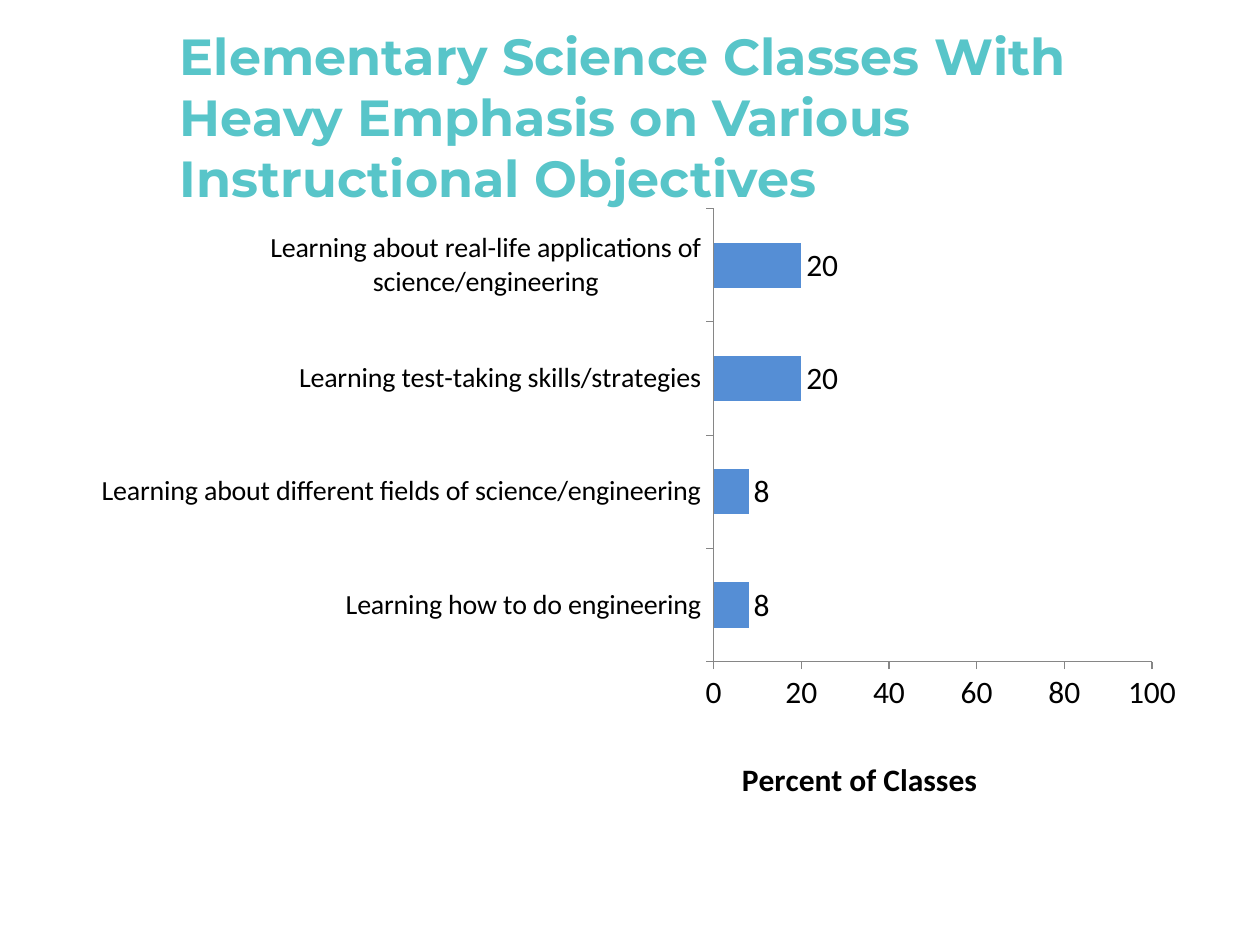
from lxml.etree import SubElement
from pptx import Presentation
from pptx.chart.data import CategoryChartData
from pptx.dml.color import RGBColor
from pptx.enum.chart import XL_CHART_TYPE, XL_LABEL_POSITION, XL_TICK_MARK
from pptx.enum.text import MSO_ANCHOR
from pptx.oxml.ns import qn
from pptx.util import Inches, Pt

TEAL = RGBColor(0x58, 0xC5, 0xC9)
BLUE = RGBColor(0x55, 0x8E, 0xD5)
GRAY = RGBColor(0x86, 0x86, 0x86)
BLACK = RGBColor(0, 0, 0)

CLASS_PERCENTS = {
    "Learning how to do engineering": 8,
    "Learning about different fields of science/engineering": 8,
    "Learning test-taking skills/strategies": 20,
    "Learning about real-life applications of science/engineering": 20,
}


def set_layout(parent, index, **settings):
    """Give a chart part a manual layout, as fractions of the chart's size."""
    for old in parent.findall(qn("c:layout")):
        parent.remove(old)
    layout = SubElement(parent, qn("c:layout"))
    manual = SubElement(layout, qn("c:manualLayout"))
    for name, value in settings.items():
        SubElement(manual, qn(f"c:{name}")).set("val", str(value))
    parent.insert(index, layout)


class SlideBuilder:
    heading_font = "Montserrat"
    body_font = "Calibri"

    def __init__(self, slide):
        self.slide = slide

    def style(self, font, name, size, color, bold=False):
        font.name = name
        font.size = Pt(size)
        font.bold = bold
        font.color.rgb = color

    def title(self, text, left, top, width, height):
        box = self.slide.shapes.add_textbox(
            Inches(left), Inches(top), Inches(width), Inches(height))
        frame = box.text_frame
        frame.word_wrap = True
        frame.vertical_anchor = MSO_ANCHOR.MIDDLE
        frame.text = text
        self.style(frame.paragraphs[0].runs[0].font, self.heading_font, 29, TEAL, True)

    def axis(self, axis, size):
        axis.has_major_gridlines = False
        axis.major_tick_mark = XL_TICK_MARK.OUTSIDE
        axis.minor_tick_mark = XL_TICK_MARK.NONE
        axis.format.line.color.rgb = GRAY
        axis.format.line.width = Pt(0.75)
        self.style(axis.tick_labels.font, self.body_font, size, BLACK)

    def bar_chart(self, percents, axis_title, left, top, width, height):
        chart_data = CategoryChartData()
        chart_data.categories = list(percents)
        chart_data.add_series("Series 1", list(percents.values()))
        chart = self.slide.shapes.add_chart(
            XL_CHART_TYPE.BAR_CLUSTERED, Inches(left), Inches(top),
            Inches(width), Inches(height), chart_data).chart
        chart.has_legend = False
        chart.has_title = False
        self.style(chart.font, self.body_font, 18, BLACK)

        plot = chart.plots[0]
        plot.gap_width = 150
        plot.vary_by_categories = False
        fill = plot.series[0].format.fill
        fill.solid()
        fill.fore_color.rgb = BLUE
        labels = plot.series[0].data_labels
        labels.show_value = True
        labels.position = XL_LABEL_POSITION.OUTSIDE_END
        self.style(labels.font, self.body_font, 18, BLACK)

        self.axis(chart.category_axis, 16)
        percent_axis = chart.value_axis
        self.axis(percent_axis, 18)
        percent_axis.minimum_scale = 0
        percent_axis.maximum_scale = 100
        percent_axis.major_unit = 20
        title_frame = percent_axis.axis_title.text_frame
        title_frame.text = axis_title
        self.style(title_frame.paragraphs[0].runs[0].font, self.body_font, 18, BLACK, True)

        plot_area = chart.element.find(".//" + qn("c:plotArea")) if hasattr(
            chart, "element") else chart._chartSpace.find(".//" + qn("c:plotArea"))
        set_layout(plot_area, 0, layoutTarget="inner", xMode="edge", yMode="edge",
                   x=0.57, y=0.02, w=0.39, h=0.75)
        set_layout(plot_area.find(".//" + qn("c:title")), 1, xMode="edge",
                   yMode="edge", x=0.59, y=0.92)


def main():
    presentation = Presentation()
    presentation.slide_width = Inches(10)
    presentation.slide_height = Inches(7.5)
    builder = SlideBuilder(presentation.slides.add_slide(presentation.slide_layouts[6]))
    builder.bar_chart(CLASS_PERCENTS, "Percent of Classes", 0.58, 1.56, 8.92, 4.86)
    builder.title("Elementary Science Classes With Heavy Emphasis on Various "
                  "Instructional Objectives", 1.33, 0.3, 8.17, 1.25)
    presentation.save("out.pptx")


if __name__ == "__main__":
    main()
